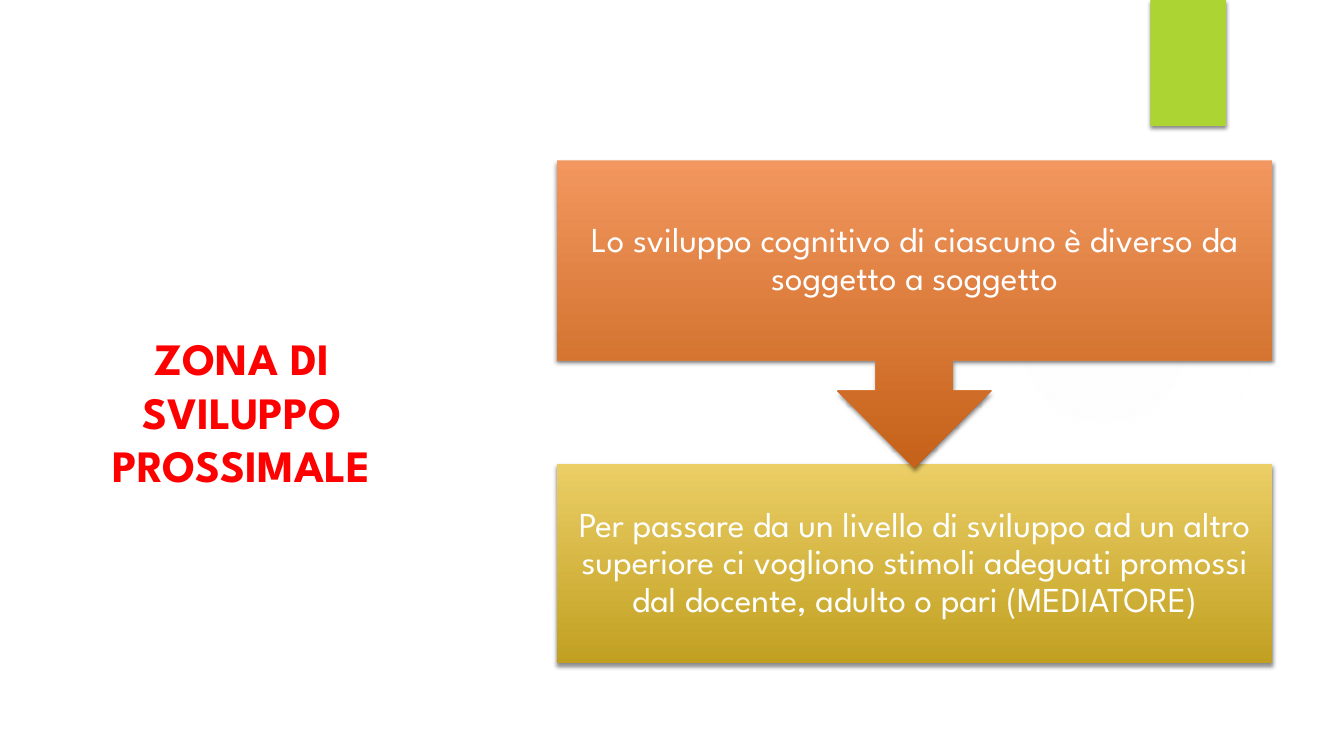
import pptx
import pptx.util
import pptx.dml.color
import pptx.enum.shapes
import pptx.enum.text
import pptx.oxml
import pptx.oxml.ns
from pptx.util import Inches

RGBColor = pptx.dml.color.RGBColor
Shapes = pptx.enum.shapes.MSO_SHAPE

FONT = "League Spartan"
WHITE = RGBColor(0xFF, 0xFF, 0xFF)
RED = RGBColor(0xFF, 0x00, 0x00)
GREEN = RGBColor(0xAC, 0xD4, 0x33)
ORANGE_LIGHT = RGBColor(0xF2, 0x97, 0x5F)
ORANGE_DARK = RGBColor(0xC5, 0x61, 0x18)
GOLD_LIGHT = RGBColor(0xEB, 0xCE, 0x66)
GOLD_DARK = RGBColor(0xC1, 0xA0, 0x21)
GLOW = RGBColor(0xF7, 0xF7, 0xF7)

NAMESPACE = pptx.oxml.ns.nsdecls("a")


def add_plain_shape(slide, kind, left, top, width, height):
    shape = slide.shapes.add_shape(
        kind, Inches(left), Inches(top), Inches(width), Inches(height))
    shape.shadow.inherit = False
    shape.line.fill.background()
    return shape


def add_soft_shadow(shape):
    properties = shape.element.spPr
    properties.remove(properties.find(pptx.oxml.ns.qn("a:effectLst")))
    properties.append(pptx.oxml.parse_xml(
        f'<a:effectLst {NAMESPACE}><a:outerShdw blurRad="{Inches(0.04)}" '
        f'dist="{pptx.util.Pt(2)}" dir="5400000" rotWithShape="0">'
        '<a:srgbClr val="000000"><a:alpha val="45000"/></a:srgbClr>'
        '</a:outerShdw></a:effectLst>'))


def add_glow(slide, left, top, size):
    """Add a circle that fades out from its centre."""
    glow = add_plain_shape(slide, Shapes.OVAL, left, top, size, size)
    stops = "".join(
        f'<a:gs pos="{position * 1000}"><a:srgbClr val="{GLOW}">'
        f'<a:alpha val="{opacity * 1000}"/></a:srgbClr></a:gs>'
        for position, opacity in ((0, 7), (36, 6), (69, 0), (100, 0)))
    gradient = pptx.oxml.parse_xml(
        f'<a:gradFill {NAMESPACE}><a:gsLst>{stops}</a:gsLst>'
        '<a:path path="circle"><a:fillToRect l="50000" t="50000" '
        'r="50000" b="50000"/></a:path></a:gradFill>')
    glow.element.spPr.find(pptx.oxml.ns.qn("a:prstGeom")).addnext(gradient)


def add_tab(slide, left, top, width, height):
    tab = add_plain_shape(slide, Shapes.RECTANGLE, left, top, width, height)
    tab.fill.solid()
    tab.fill.fore_color.rgb = GREEN
    add_soft_shadow(tab)


def write_centred(shape, text, size, color, bold=False):
    frame = shape.text_frame
    frame.word_wrap = True
    frame.vertical_anchor = pptx.enum.text.MSO_ANCHOR.MIDDLE
    frame.text = text
    paragraph = frame.paragraphs[0]
    paragraph.alignment = pptx.enum.text.PP_ALIGN.CENTER
    font = paragraph.runs[0].font
    font.name = FONT
    font.size = pptx.util.Pt(size)
    font.bold = bold
    font.color.rgb = color


def add_title(slide, text):
    title = slide.shapes.add_textbox(
        Inches(0.7), Inches(1.58), Inches(3.4), Inches(5))
    write_centred(title, text, 32, RED, bold=True)


def add_step(slide, kind, top, height, colors, text):
    """Add a process step filled from the light to the dark colour."""
    step = add_plain_shape(slide, kind, 5.52, top, 7.1, height)
    step.fill.gradient()
    step.fill.gradient_angle = 270
    for stop, color in zip(step.fill.gradient_stops, colors):
        stop.color.rgb = color
    add_soft_shadow(step)
    write_centred(step, text, 25, WHITE)
    frame = step.text_frame
    frame.margin_left = frame.margin_right = Inches(0.19)
    frame.margin_top = frame.margin_bottom = Inches(0.19)
    frame.paragraphs[0].line_spacing = 0.9


def main():
    presentation = pptx.Presentation()
    presentation.slide_width = Inches(13.33)
    presentation.slide_height = Inches(7.5)
    slide = presentation.slides.add_slide(presentation.slide_layouts[6])

    add_glow(slide, 9.41, 1.83, 3.08)
    add_tab(slide, 11.41, 0, 0.75, 1.25)
    add_title(slide, "ZONA DI SVILUPPO PROSSIMALE")
    add_step(slide, Shapes.RECTANGLE, 4.6, 1.98, (GOLD_LIGHT, GOLD_DARK),
             "Per passare da un livello di sviluppo ad un altro superiore ci "
             "vogliono stimoli adeguati promossi dal docente, adulto o pari "
             "(MEDIATORE)")
    add_step(slide, Shapes.DOWN_ARROW_CALLOUT, 1.59, 3.05,
             (ORANGE_LIGHT, ORANGE_DARK),
             "Lo sviluppo cognitivo di ciascuno è diverso da soggetto a "
             "soggetto")
    presentation.save("out.pptx")


if __name__ == "__main__":
    main()
